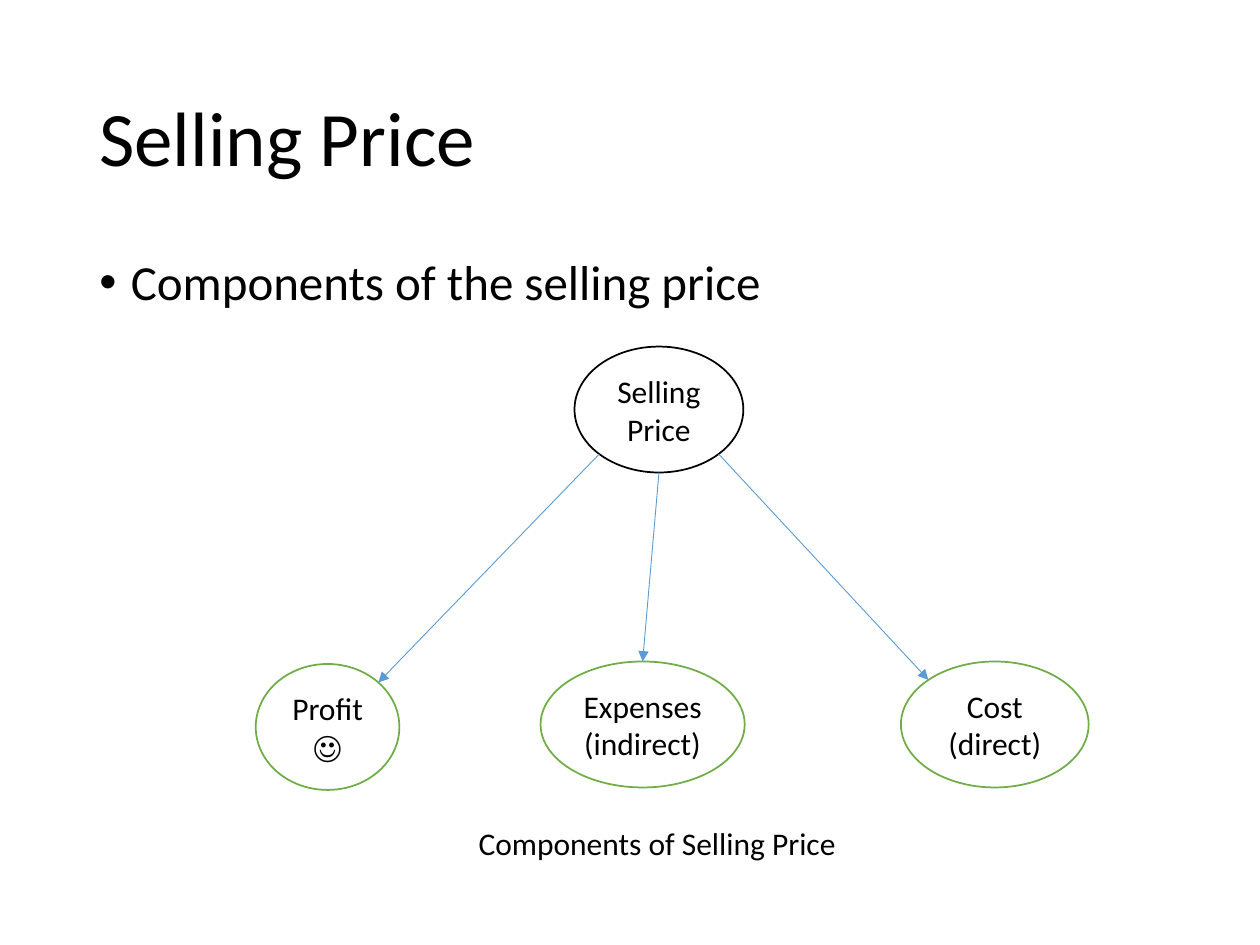
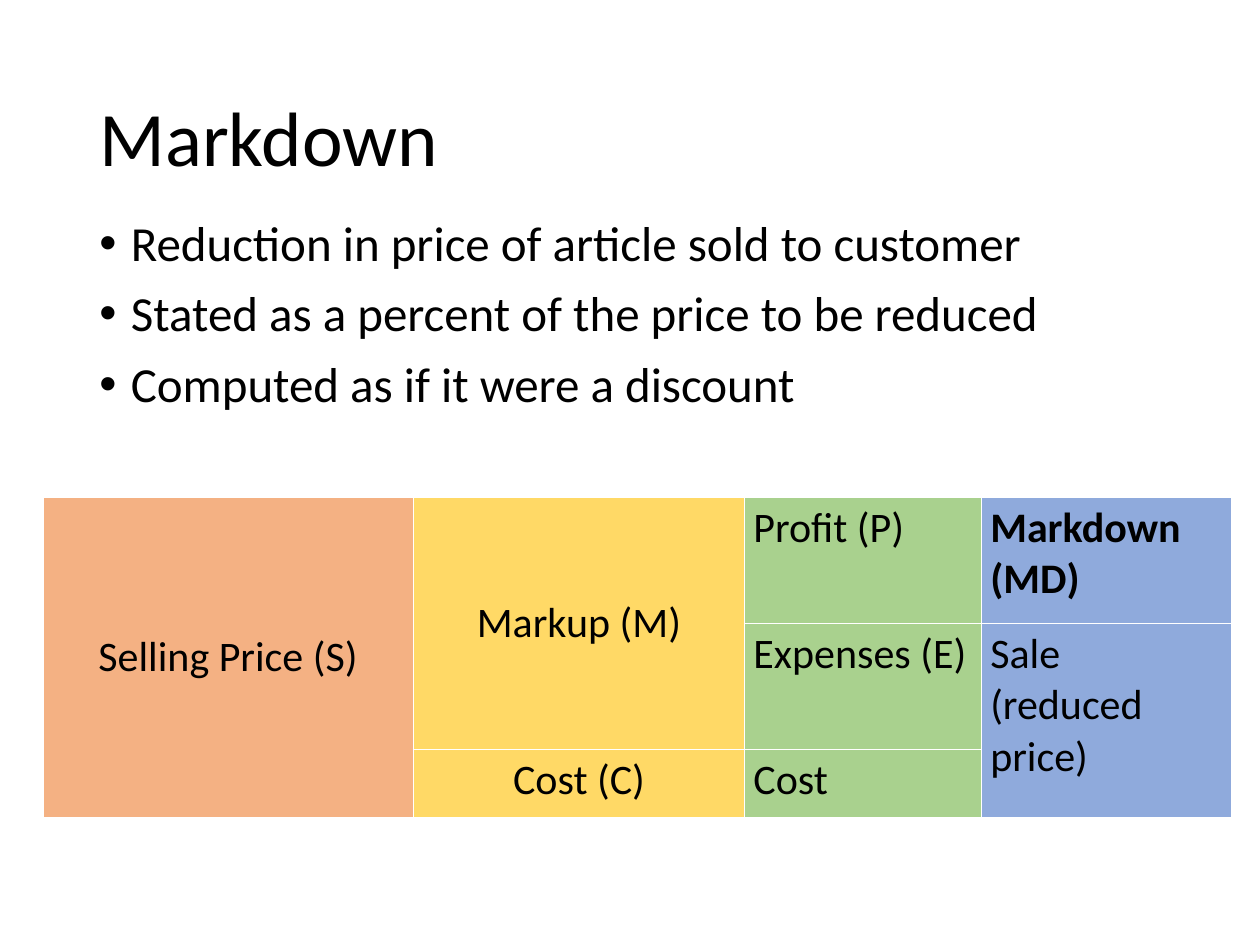
"""Build two slides on the parts of a selling price and on markdown."""
from math import hypot

from lxml import etree
from pptx import Presentation, util as u
from pptx.dml.color import RGBColor
from pptx.enum import shapes, text
from pptx.oxml.ns import qn

COLORS = {
    "text": "000000", "paper": "FFFFFF", "part": "70AD47", "arrow": "5B9BD5",
    "selling": "F4B183", "markup": "FFD966", "profit": "A9D18E", "markdown": "8FAADC",
}
FONT = "Calibri"
SIZES = {"title": 44, "bullet": 28, "cell": 24, "label": 18}
WIDTH, HEIGHT = u.Inches(10), u.Inches(7.5)
LEFT, TEXT_WIDTH = 6.9, 86.2
MIDDLE, TOP = text.MSO_ANCHOR.MIDDLE, text.MSO_ANCHOR.TOP
CENTER = text.PP_ALIGN.CENTER

# Places are percentages of the slide: left, top, width, height.
SELLING_PRICE = {
    "title": "Selling Price",
    "bullets": ["Components of the selling price"],
    "body": (LEFT, 26.67, TEXT_WIDTH, 63.47),
    "whole": ("Selling Price", (45.6, 36.67, 13.4, 13.33)),
    "parts": [
        ("Profit ☺", (20.3, 70.27, 11.4, 13.33), -1),
        ("Expenses (indirect)", (42.9, 70, 16.2, 13.33), 0),
        ("Cost (direct)", (71.5, 70, 14.9, 13.33), 1),
    ],
    "caption": ("Components of Selling Price", (37, 86.53, 30.7, 5.33)),
}
MARKDOWN = {
    "title": "Markdown",
    "bullets": [
        "Reduction in price of article sold to customer",
        "Stated as a percent of the price to be reduced",
        "Computed as if it were a discount",
    ],
    "body": (LEFT, 22.53, TEXT_WIDTH, 23.33),
    "table": (3.4, 52.67, 94.4, 33.87),
    "columns": [("selling", 29.4), ("markup", 26.3), ("profit", 18.8), ("markdown", 19.9)],
    "rows": [13.33, 13.33, 7.2],
    "cells": [
        (0, 0, 3, "Selling Price (S)"), (0, 1, 2, "Markup (M)"),
        (0, 2, 1, "Profit (P)"), (0, 3, 1, "Markdown (MD)"),
        (1, 2, 1, "Expenses (E)"), (1, 3, 2, "Sale\n(reduced price)"),
        (2, 1, 1, "Cost (C)"), (2, 2, 1, "Cost"),
    ],
    "bold": "Markdown (MD)",
    "centered_columns": 2,
}


def color(name):
    return RGBColor.from_string(COLORS[name])


def place(box):
    return [round(share * side / 100) for share, side in zip(box, (WIDTH, HEIGHT) * 2)]


def write(text_frame, content, size, align=None, bold=False):
    text_frame.text = content
    for paragraph in text_frame.paragraphs:
        paragraph.alignment = align
        for run in paragraph.runs:
            run.font.name = FONT
            run.font.size = u.Pt(SIZES[size])
            run.font.bold = bold
            run.font.color.rgb = color("text")


def add_text(slide, box, content, size, anchor=TOP, wrap=True):
    text_frame = slide.shapes.add_textbox(*place(box)).text_frame
    text_frame.word_wrap = wrap
    text_frame.vertical_anchor = anchor
    write(text_frame, content, size)
    return text_frame


def add_page(presentation, content):
    slide = presentation.slides.add_slide(presentation.slide_layouts[6])
    title = add_text(slide, (LEFT, 5.33, TEXT_WIDTH, 19.33), content["title"], "title", MIDDLE)
    title.paragraphs[0].line_spacing = 0.9
    body = add_text(slide, content["body"], "\n".join(content["bullets"]), "bullet")
    for paragraph in body.paragraphs:
        paragraph.line_spacing = 0.9
        paragraph.space_before = u.Pt(10)
        properties = paragraph._p.get_or_add_pPr()
        properties.set("marL", str(u.Inches(0.25)))
        properties.set("indent", str(-u.Inches(0.25)))
        etree.SubElement(properties, qn("a:buFont"), typeface="Arial")
        etree.SubElement(properties, qn("a:buChar"), char="•")
    return slide


def add_ellipse(slide, label, box, outline):
    ellipse = slide.shapes.add_shape(shapes.MSO_SHAPE.OVAL, *place(box))
    ellipse.shadow.inherit = False
    ellipse.fill.solid()
    ellipse.fill.fore_color.rgb = color("paper")
    ellipse.line.color.rgb = color(outline)
    ellipse.line.width = u.Pt(1)
    ellipse.text_frame.word_wrap = True
    ellipse.text_frame.vertical_anchor = MIDDLE
    write(ellipse.text_frame, label, "label", CENTER)
    return ellipse


def rim_point(ellipse, across, down):
    reach = 2 * hypot(across, down)
    return (round(ellipse.left + ellipse.width * (0.5 + across / reach)),
            round(ellipse.top + ellipse.height * (0.5 + down / reach)))


def add_arrow(slide, whole, part, side):
    arrow = slide.shapes.add_connector(
        shapes.MSO_CONNECTOR.STRAIGHT, *rim_point(whole, side, 1), *rim_point(part, -side, -1))
    if side == 0:
        arrow.end_connect(part, 0)
    arrow.line.color.rgb = color("arrow")
    arrow.line.width = u.Pt(0.5)
    etree.SubElement(arrow.line._get_or_add_ln(), qn("a:tailEnd"), type="triangle")
    etree.SubElement(arrow._element.spPr, qn("a:effectLst"))


def add_price_tree(slide, content):
    whole = add_ellipse(slide, *content["whole"], "text")
    for label, box, side in content["parts"]:
        add_arrow(slide, whole, add_ellipse(slide, label, box, "part"), side)
    caption, box = content["caption"]
    add_text(slide, box, caption, "label", wrap=False)


def style_cell(cell, fill):
    properties = cell._tc.get_or_add_tcPr()
    for edge in ("lnL", "lnR", "lnT", "lnB"):
        border = etree.SubElement(properties, qn(f"a:{edge}"), w=str(u.Pt(1)))
        solid = etree.SubElement(border, qn("a:solidFill"))
        etree.SubElement(solid, qn("a:srgbClr"), val=COLORS["paper"])
    cell.fill.solid()
    cell.fill.fore_color.rgb = color(fill)
    cell.margin_left = cell.margin_right = u.Inches(0.07)
    cell.margin_top = cell.margin_bottom = u.Inches(0.04)


def add_price_table(slide, content):
    columns, rows = content["columns"], content["rows"]
    table = slide.shapes.add_table(len(rows), len(columns), *place(content["table"])).table
    for row, share in zip(table.rows, rows):
        row.height = round(HEIGHT * share / 100)
    for index, (fill, share) in enumerate(columns):
        table.columns[index].width = round(WIDTH * share / 100)
        for row in range(len(rows)):
            style_cell(table.cell(row, index), fill)
    for row, column, span, label in content["cells"]:
        cell = table.cell(row, column)
        centered = column < content["centered_columns"]
        if span > 1:
            cell.merge(table.cell(row + span - 1, column))
        cell.vertical_anchor = MIDDLE if centered and span > 1 else TOP
        write(cell.text_frame, label, "cell", CENTER if centered else None,
              label == content["bold"])


def main():
    presentation = Presentation()
    presentation.slide_width, presentation.slide_height = WIDTH, HEIGHT
    add_price_tree(add_page(presentation, SELLING_PRICE), SELLING_PRICE)
    add_price_table(add_page(presentation, MARKDOWN), MARKDOWN)
    presentation.save("out.pptx")


if __name__ == "__main__":
    main()
